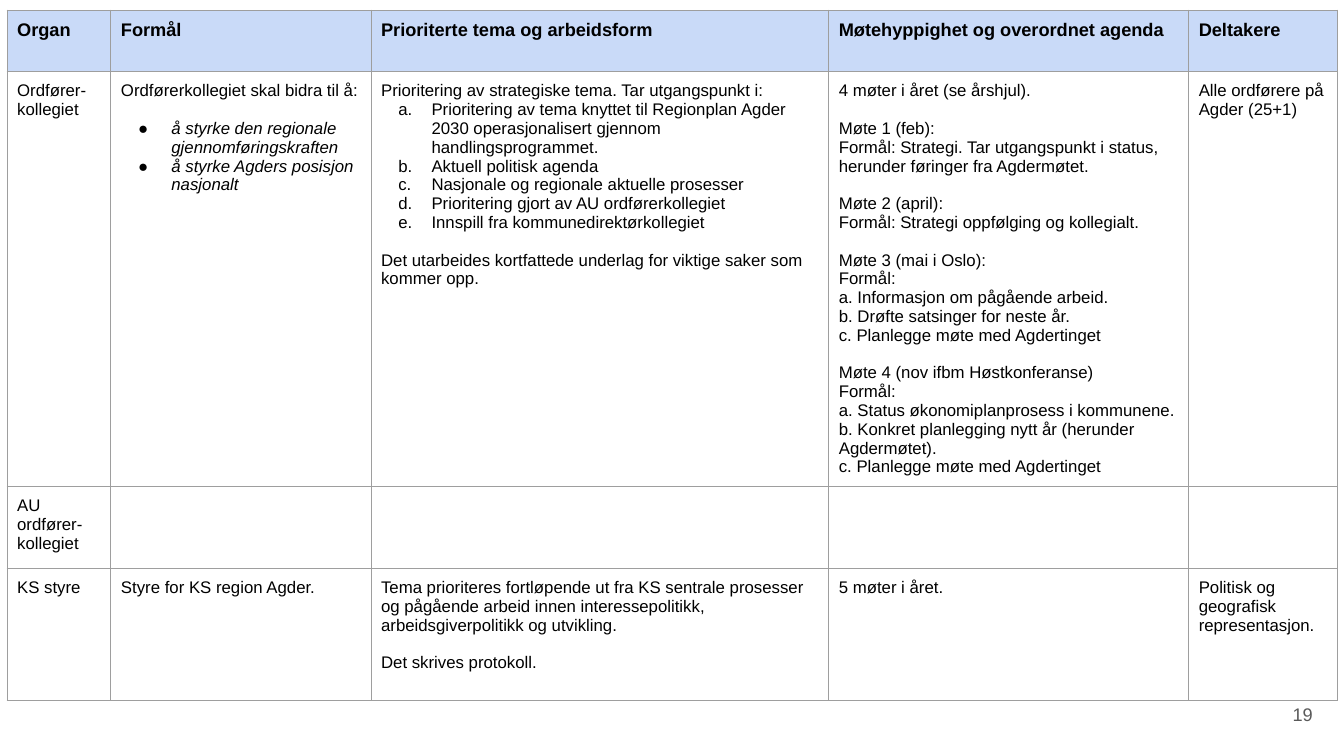
from lxml import etree
from pptx import Presentation
from pptx.dml.color import RGBColor
from pptx.enum.text import MSO_ANCHOR, PP_ALIGN
from pptx.oxml.ns import qn
from pptx.util import Inches, Pt

DOT, LETTER = "dot", "letter"  # list kinds
GAP = ""  # one line of air before the next paragraph

HEADER = ["Organ", "Formål", "Prioriterte tema og arbeidsform",
          "Møtehyppighet og overordnet agenda", "Deltakere"]
MAYORS = [
    ["Ordfører- kollegiet"],
    ["Ordførerkollegiet skal bidra til å:",
     GAP,
     (DOT, "å styrke den regionale gjennomføringskraften"),
     (DOT, "å styrke Agders posisjon nasjonalt")],
    ["Prioritering av strategiske tema. Tar utgangspunkt i:",
     (LETTER, "Prioritering av tema knyttet til Regionplan Agder 2030 "
              "operasjonalisert gjennom handlingsprogrammet."),
     (LETTER, "Aktuell politisk agenda"),
     (LETTER, "Nasjonale og regionale aktuelle prosesser"),
     (LETTER, "Prioritering gjort av AU ordførerkollegiet"),
     (LETTER, "Innspill fra kommunedirektørkollegiet"),
     GAP,
     "Det utarbeides kortfattede underlag for viktige saker som kommer opp."],
    ["4 møter i året (se årshjul).",
     GAP,
     "Møte 1 (feb):",
     "Formål: Strategi. Tar utgangspunkt i status, herunder føringer fra Agdermøtet.",
     GAP,
     "Møte 2 (april):",
     "Formål: Strategi oppfølging og kollegialt.",
     GAP,
     "Møte 3 (mai i Oslo):",
     "Formål:",
     "a. Informasjon om pågående arbeid.",
     "b. Drøfte satsinger for neste år.",
     "c. Planlegge møte med Agdertinget",
     GAP,
     "Møte 4 (nov ifbm Høstkonferanse)",
     "Formål:",
     "a. Status økonomiplanprosess i kommunene. "
     "b. Konkret planlegging nytt år (herunder Agdermøtet).",
     "c. Planlegge møte med Agdertinget"],
    ["Alle ordførere på Agder (25+1)"],
]
MAYORS_COMMITTEE = [["AU ordfører- kollegiet"], [], [], [], []]
KS_BOARD = [
    ["KS styre"],
    ["Styre for KS region Agder."],
    ["Tema prioriteres fortløpende ut fra KS sentrale prosesser og pågående "
     "arbeid innen interessepolitikk, arbeidsgiverpolitikk og utvikling.",
     GAP,
     "Det skrives protokoll."],
    ["5 møter i året."],
    ["Politisk og geografisk representasjon."],
]
ROWS = [[[title] for title in HEADER], MAYORS, MAYORS_COMMITTEE, KS_BOARD]
PAGE_NUMBER = "19"

COLUMN_WIDTHS = [1.03, 2.58, 4.54, 3.57, 1.48]
ROW_HEIGHTS = [0.61, 3.6, 0.81, 1.31]
TABLE_LEFT, TABLE_TOP = 0.07, 0.1
HEADER_SIZE, BODY_SIZE = 13, 12
LINE_HEIGHT = Pt(13.4)
BLACK, GREY, BORDER, HEADER_FILL = "000000", "595959", "9E9E9E", "C9DAF8"


def color(hex_value):
    return RGBColor.from_string(hex_value)


def style(paragraph, size, hex_value=BLACK, bold=False, italic=False):
    font = paragraph.font
    font.name, font.size, font.bold, font.italic = "Arial", Pt(size), bold, italic
    font.color.rgb = color(hex_value)


def set_insets(holder, inset):
    holder.margin_left = holder.margin_right = Inches(inset)
    holder.margin_top = holder.margin_bottom = Inches(inset)


def add_list_mark(paragraph, kind):
    props = paragraph._p.get_or_add_pPr()
    props.set("marL", str(Inches(0.5)))
    props.set("indent", str(Inches(-0.33)))
    mark_color = etree.SubElement(props, qn("a:buClr"))
    etree.SubElement(mark_color, qn("a:srgbClr"), val=BLACK)
    if kind == DOT:
        etree.SubElement(props, qn("a:buFont"), typeface="Arial")
        etree.SubElement(props, qn("a:buChar"), char="●")
    else:
        etree.SubElement(props, qn("a:buAutoNum"), type="alphaLcPeriod")


def add_borders(cell):
    props = cell._tc.get_or_add_tcPr()
    for side in ("lnL", "lnR", "lnT", "lnB"):
        line = etree.SubElement(props, qn(f"a:{side}"), w=str(Pt(0.75)))
        fill = etree.SubElement(line, qn("a:solidFill"))
        etree.SubElement(fill, qn("a:srgbClr"), val=BORDER)


def write_cell(cell, lines, is_header):
    frame = cell.text_frame
    paragraph, after_gap = None, False
    for line in lines:
        if line == GAP:
            after_gap = True
            continue
        kind, text = line if isinstance(line, tuple) else (None, line)
        paragraph = frame.add_paragraph() if paragraph else frame.paragraphs[0]
        paragraph.text = text
        if after_gap:
            paragraph.space_before = LINE_HEIGHT
            after_gap = False
        if kind:
            add_list_mark(paragraph, kind)
        style(paragraph, HEADER_SIZE if is_header else BODY_SIZE,
              bold=is_header, italic=kind == DOT)


def add_organ_table(slide):
    table = slide.shapes.add_table(
        len(ROWS), len(HEADER), Inches(TABLE_LEFT), Inches(TABLE_TOP),
        Inches(sum(COLUMN_WIDTHS)), Inches(sum(ROW_HEIGHTS))).table
    table.first_row = table.horz_banding = False
    for column, width in zip(table.columns, COLUMN_WIDTHS):
        column.width = Inches(width)
    for row_index, (row, height) in enumerate(zip(table.rows, ROW_HEIGHTS)):
        row.height = Inches(height)
        is_header = row_index == 0
        for cell, lines in zip(row.cells, ROWS[row_index]):
            set_insets(cell, 0.1)
            add_borders(cell)
            if is_header:
                cell.fill.solid()
                cell.fill.fore_color.rgb = color(HEADER_FILL)
            else:
                cell.fill.background()
            write_cell(cell, lines, is_header)


def add_page_number(slide):
    frame = slide.shapes.add_textbox(
        Inches(12.35), Inches(6.8), Inches(0.8), Inches(0.57)).text_frame
    frame.word_wrap = True
    frame.vertical_anchor = MSO_ANCHOR.MIDDLE
    set_insets(frame, 0.13)
    paragraph = frame.paragraphs[0]
    paragraph.text = PAGE_NUMBER
    paragraph.alignment = PP_ALIGN.RIGHT
    style(paragraph, HEADER_SIZE, GREY)


def main():
    deck = Presentation()
    deck.slide_width, deck.slide_height = Inches(13.33), Inches(7.5)
    slide = deck.slides.add_slide(deck.slide_layouts[6])
    add_organ_table(slide)
    add_page_number(slide)
    deck.save("out.pptx")


if __name__ == "__main__":
    main()
